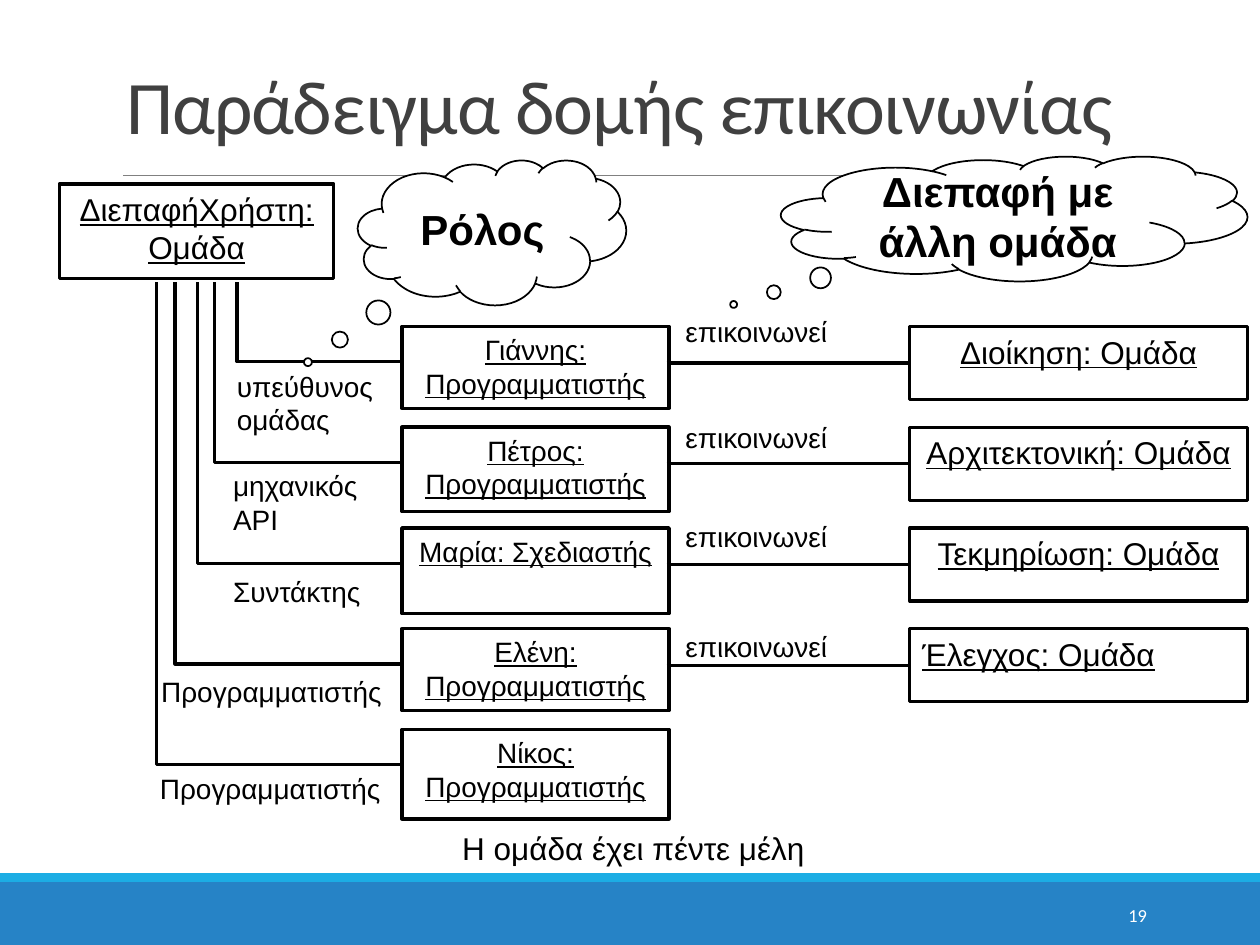
from dataclasses import dataclass

from lxml import etree
from pptx import Presentation
from pptx.dml.color import RGBColor
from pptx.enum.shapes import MSO_CONNECTOR, MSO_SHAPE
from pptx.enum.text import MSO_ANCHOR, MSO_AUTO_SIZE, PP_ALIGN
from pptx.oxml.ns import qn
from pptx.util import Inches, Pt

RECTANGLE, CLOUD = MSO_SHAPE.RECTANGLE, MSO_SHAPE.CLOUD_CALLOUT
STRAIGHT = MSO_CONNECTOR.STRAIGHT
TOP, MIDDLE, BOTTOM = MSO_ANCHOR.TOP, MSO_ANCHOR.MIDDLE, MSO_ANCHOR.BOTTOM
LEFT, CENTER, RIGHT = PP_ALIGN.LEFT, PP_ALIGN.CENTER, PP_ALIGN.RIGHT
FIXED, GROW = MSO_AUTO_SIZE.NONE, MSO_AUTO_SIZE.SHAPE_TO_FIT_TEXT
LEFT_SIDE = 1
GRID_COLUMNS, GRID_ROWS = 100, 75
ROW_PITCH, BRANCH_DROP = 8, 2.8


@dataclass(frozen=True)
class Theme:
    """Colours, type sizes, fonts and line widths of the slide."""
    ink: str = "000000"
    paper: str = "FFFFFF"
    title: str = "404040"
    rule: str = "808080"
    band: str = "2683C6"
    stripe: str = "1CADE4"
    title_size: float = 43.2
    cloud_size: float = 24
    team_size: float = 18
    member_size: float = 16
    number_size: float = 10.5
    body_font: str = "Arial"
    heading_font: str = "Calibri"
    heavy: float = 1.88
    thin: float = 1
    hairline: float = 0.5


THEME = Theme()

MEMBERS = [
    ("Γιάννης: Προγραμματιστής", 6.5, 18.8, "υπεύθυνος ομάδας", (18.8, 29.3, 13, 5.3)),
    ("Πέτρος: Προγραμματιστής", 6.7, 17, "μηχανικός API", (18.5, 37.2, 12.7, 5.3)),
    ("Μαρία: Σχεδιαστής", 6.8, 15.7, "Συντάκτης", (18.5, 45.6, 10.2, 2.7)),
    ("Ελένη: Προγραμματιστής", 6.5, 13.9, "Προγραμματιστής", (12.8, 53.5, 17.6, 2.7)),
    ("Νίκος: Προγραμματιστής", 7.1, 12.4, "Προγραμματιστής", (12.7, 61.2, 17.6, 2.7)),
]
PEERS = [
    ("Διοίκηση: Ομάδα", CENTER, -0.9),
    ("Αρχιτεκτονική: Ομάδα", CENTER, -0.5),
    ("Τεκμηρίωση: Ομάδα", CENTER, -0.7),
    ("Έλεγχος: Ομάδα", LEFT, 0.1),
]
CLOUDS = [
    ("Ρόλος", (28.4, 12.7, 21.3, 11.5), (-0.686, 0.895), False),
    ("Διεπαφή με άλλη ομάδα", (62, 12.4, 37, 9.9), (-0.602, 0.688), True),
]


def cells(*counts):
    """Turn grid cells into lengths."""
    return [Inches(count / 10) for count in counts]


def apply(target, values):
    """Set each attribute named in a dict of format values."""
    for name, value in values.items():
        setattr(target, name, value)


def write(shape, text, size, align=LEFT, anchor=TOP, wrap=True, inset=True,
          auto_size=FIXED, color=THEME.ink, name=THEME.body_font, **style):
    """Write one formatted paragraph into a shape and return it."""
    frame = shape.text_frame
    apply(frame, {"word_wrap": wrap, "vertical_anchor": anchor, "auto_size": auto_size})
    if not inset:
        sides = ("left", "top", "right", "bottom")
        apply(frame, {f"margin_{side}": 0 for side in sides})
    paragraph = frame.paragraphs[0]
    paragraph.alignment = align
    run = paragraph.add_run()
    run.text = text
    apply(run.font, {"size": Pt(size), "name": name, **style})
    run.font.color.rgb = RGBColor.from_string(color)
    return paragraph


def paint(shape, fill=None, line=None, width=THEME.heavy):
    """Set the fill and outline of a shape without a shadow."""
    shape.shadow.inherit = False
    for part, color in ((shape.fill, fill), (shape.line.fill, line)):
        if color:
            part.solid()
            part.fore_color.rgb = RGBColor.from_string(color)
        else:
            part.background()
    if line:
        shape.line.width = Pt(width)


def add_box(slide, box, preset=RECTANGLE, **look):
    """Place a painted preset shape."""
    shape = slide.shapes.add_shape(preset, *cells(*box))
    paint(shape, **look)
    return shape


def add_line(slide, start, end, color=THEME.ink, width=THEME.heavy):
    """Draw a straight connector without a shadow."""
    line = slide.shapes.add_connector(STRAIGHT, *cells(*start, *end))
    line.line.color.rgb = RGBColor.from_string(color)
    line.line.width = Pt(width)
    etree.SubElement(line._element.spPr, qn("a:effectLst"))
    return line


def add_label(slide, box, text, size=THEME.member_size, **format_values):
    """Place a free-standing text."""
    label = slide.shapes.add_textbox(*cells(*box))
    write(label, text, size, **format_values)


def add_object(slide, box, text, size, align=CENTER):
    """Place an outlined box with an underlined object name."""
    shape = add_box(slide, box, line=THEME.ink)
    write(shape, text, size, align, underline=True)
    return shape


def add_frame(slide, box):
    """Place the title with its rule and the footer bands with the number."""
    left, top, width, height = box
    add_box(slide, (left, top + height - 5, width, 5), fill=THEME.band)
    add_box(slide, (left, top + height - 5.7, width, 0.7), fill=THEME.stripe)
    add_line(slide, (left + 9.8, top + 13.9), (left + 91.5, top + 13.9),
             THEME.rule, THEME.hairline)
    title = slide.shapes.title
    places = cells(left + 9, top + 3.1, 82.5, 9.3)
    apply(title, dict(zip(("left", "top", "width", "height"), places)))
    paragraph = write(title, "Παράδειγμα δομής επικοινωνίας", THEME.title_size,
                      anchor=BOTTOM, color=THEME.title, name=THEME.heading_font)
    paragraph.line_spacing = 0.85
    paragraph.runs[0].font._element.set("spc", "-50")
    add_label(slide, (left + 81.2, top + height - 4.4, 10.8, 4), "19",
              THEME.number_size, align=RIGHT, anchor=MIDDLE,
              color=THEME.paper, name=THEME.heading_font)


def add_members(slide, box):
    """Stack the members and branch each one off the team above."""
    left, top, width, trunk_top = box
    for index, (name, height, trunk, role, role_box) in enumerate(MEMBERS):
        row = top + index * ROW_PITCH
        add_object(slide, (left, row, width, height), name, THEME.member_size)
        branch = row + BRANCH_DROP
        builder = slide.shapes.build_freeform(*cells(trunk, trunk_top))
        corners = ((trunk, branch), (left, branch))
        builder.add_line_segments([cells(*corner) for corner in corners], close=False)
        paint(builder.convert_to_shape(), line=THEME.ink)
        add_label(slide, role_box, role, inset=False, auto_size=GROW, wrap=" " in role)


def add_peers(slide, box):
    """Stack the other teams and link each one to its member."""
    left, top, width, height = box
    for index, (name, align, label_shift) in enumerate(PEERS):
        row = top + index * ROW_PITCH
        peer = add_object(slide, (left, row, width, height), name, THEME.team_size, align)
        middle = row + height / 2
        link = add_line(slide, (left - 19.3, middle), (left, middle))
        link.end_connect(peer, LEFT_SIDE)
        add_label(slide, (left - 17.8, row + label_shift, 11.3, 2.7), "επικοινωνεί",
                  inset=False, wrap=False, auto_size=GROW)


def add_cloud(slide, box, text, tail, wrap):
    """Place a thought cloud with its tail."""
    cloud = add_box(slide, box, CLOUD, fill=THEME.paper, line=THEME.ink, width=THEME.thin)
    for index, offset in enumerate(tail):
        cloud.adjustments[index] = offset
    write(cloud, text, THEME.cloud_size, CENTER, MIDDLE, wrap, bold=True)


def main():
    """Build and save the slide."""
    presentation = Presentation()
    width, height = cells(GRID_COLUMNS, GRID_ROWS)
    apply(presentation, {"slide_width": width, "slide_height": height})
    slide = presentation.slides.add_slide(presentation.slide_layouts[5])
    add_frame(slide, (0, 0, GRID_COLUMNS, GRID_ROWS))
    add_members(slide, (31.9, 25.9, 21.2, 22.4))
    add_peers(slide, (72.2, 25.9, 26.8, 5.8))
    for text, box, tail, wrap in CLOUDS:
        add_cloud(slide, box, text, tail, wrap)
    add_object(slide, (4.7, 14.6, 21.8, 7.5), "ΔιεπαφήΧρήστη: Ομάδα", THEME.team_size)
    add_label(slide, (35.7, 65.3, 29.2, 4), "Η ομάδα έχει πέντε μέλη",
              THEME.team_size, wrap=False, auto_size=GROW)
    presentation.save("out.pptx")


if __name__ == "__main__":
    main()
